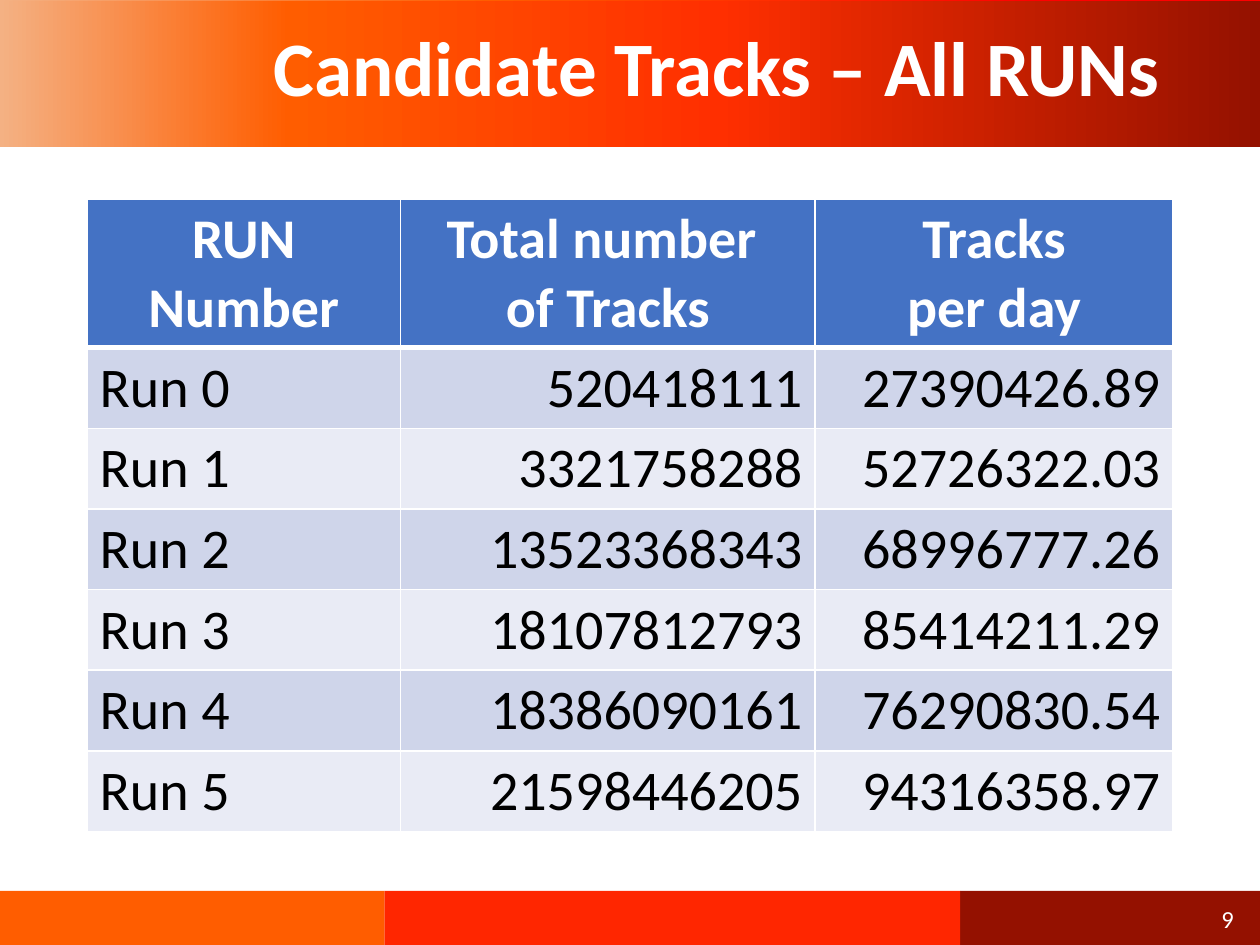
import lxml.etree
import pptx
import pptx.dml.color
import pptx.enum.shapes
import pptx.enum.text
import pptx.oxml.ns
import pptx.util

Inches = pptx.util.Inches
Pt = pptx.util.Pt
RGBColor = pptx.dml.color.RGBColor
PP_ALIGN = pptx.enum.text.PP_ALIGN
MIDDLE = pptx.enum.text.MSO_ANCHOR.MIDDLE
qn = pptx.oxml.ns.qn

WHITE = RGBColor(0xFF, 0xFF, 0xFF)
BLACK = RGBColor(0x00, 0x00, 0x00)
PEACH = RGBColor(0xF4, 0xB1, 0x83)
ORANGE = RGBColor(0xFF, 0x5D, 0x00)
RED = RGBColor(0xFF, 0x00, 0x00)
VERMILION = RGBColor(0xFF, 0x2F, 0x00)
SCARLET = RGBColor(0xFF, 0x26, 0x00)
MAROON = RGBColor(0x94, 0x11, 0x00)
HEADER = RGBColor(0x44, 0x72, 0xC4)
BAND_DARK = RGBColor(0xCF, 0xD5, 0xEA)
BAND_LIGHT = RGBColor(0xE9, 0xEB, 0xF5)


def add_bar(s, x, y, w, h, color):
    sp = s.shapes.add_shape(pptx.enum.shapes.MSO_SHAPE.RECTANGLE,
                            Inches(x), Inches(y), Inches(w), Inches(h))
    sp.shadow.inherit = False
    sp.fill.solid()
    sp.fill.fore_color.rgb = color
    sp.line.fill.background()
    return sp


def format_text(tf, size, color, bold, align):
    for p in tf.paragraphs:
        p.alignment = align
        for r in p.runs:
            r.font.name = "Calibri"
            r.font.size = Pt(size)
            r.font.bold = bold
            r.font.color.rgb = color


prs = pptx.Presentation()
prs.slide_width = Inches(10)
prs.slide_height = Inches(7.5)
s = prs.slides.add_slide(prs.slide_layouts[6])

banners = [
    (-0.01, 45, [(0, PEACH), (35, ORANGE), (74, RED)]),
    (0.01, 0, [(0, PEACH), (23, ORANGE), (57, VERMILION), (100, MAROON)]),
]
for y, angle, stops in banners:
    sp = add_bar(s, 0, y, 10, 1.16, ORANGE)
    sp.fill.gradient()
    grad = sp._element.spPr.find(qn("a:gradFill"))
    stop_list = grad.find(qn("a:gsLst"))
    for gs in list(stop_list):
        stop_list.remove(gs)
    for percent, color in stops:
        gs = lxml.etree.SubElement(stop_list, qn("a:gs"), pos=str(percent * 1000))
        lxml.etree.SubElement(gs, qn("a:srgbClr"), val=str(color))
    grad.find(qn("a:lin")).set("ang", str(angle * 60000))

for x, w, h, color in [(7.62, 2.38, 0.45, MAROON),
                       (3.05, 4.57, 0.44, SCARLET),
                       (0, 3.05, 0.45, ORANGE)]:
    add_bar(s, x, 7.07, w, h, color)

labels = [
    ("Candidate Tracks – All RUNs", 0.69, 0.01, 8.62, 1.11, 44, True),
    ("9", 7.64, 7.09, 2.25, 0.4, 14, False),
]
for text, x, y, w, h, size, bold in labels:
    tf = s.shapes.add_textbox(Inches(x), Inches(y), Inches(w), Inches(h)).text_frame
    tf.word_wrap = True
    tf.vertical_anchor = MIDDLE
    tf.text = text
    format_text(tf, size, WHITE, bold, PP_ALIGN.RIGHT)
    if bold:
        tf.paragraphs[0].line_spacing = 0.9

rows = [
    ("RUN Number", "Total number \vof Tracks", "Tracks\vper day"),
    ("Run 0", "520418111", "27390426.89"),
    ("Run 1", "3321758288", "52726322.03"),
    ("Run 2", "13523368343", "68996777.26"),
    ("Run 3", "18107812793", "85414211.29"),
    ("Run 4", "18386090161", "76290830.54"),
    ("Run 5", "21598446205", "94316358.97"),
]
table = s.shapes.add_table(len(rows), 3, Inches(0.69), Inches(1.58),
                           Inches(8.62), Inches(5.02)).table
for column, width in zip(table.columns, (2.49, 3.29, 2.84)):
    column.width = Inches(width)

for i, values in enumerate(rows):
    table.rows[i].height = Inches(0.64 if i else 1.18)
    for j, value in enumerate(values):
        cell = table.cell(i, j)
        cell.text_frame.text = value
        if i == 0:
            fill, color, align = HEADER, WHITE, PP_ALIGN.CENTER
        else:
            fill = BAND_DARK if i % 2 else BAND_LIGHT
            color = BLACK
            align = PP_ALIGN.RIGHT if j else PP_ALIGN.LEFT
        format_text(cell.text_frame, 32, color, i == 0, align)

        tcPr = cell._tc.get_or_add_tcPr()
        for side in ("L", "R", "T", "B"):
            thick = (i == 0 and side == "B") or (i == 1 and side == "T")
            ln = lxml.etree.SubElement(tcPr, qn("a:ln" + side),
                                       w=str(Pt(3 if thick else 1)))
            solid = lxml.etree.SubElement(ln, qn("a:solidFill"))
            lxml.etree.SubElement(solid, qn("a:srgbClr"), val=str(WHITE))
        cell.fill.solid()
        cell.fill.fore_color.rgb = fill

prs.save("out.pptx")
